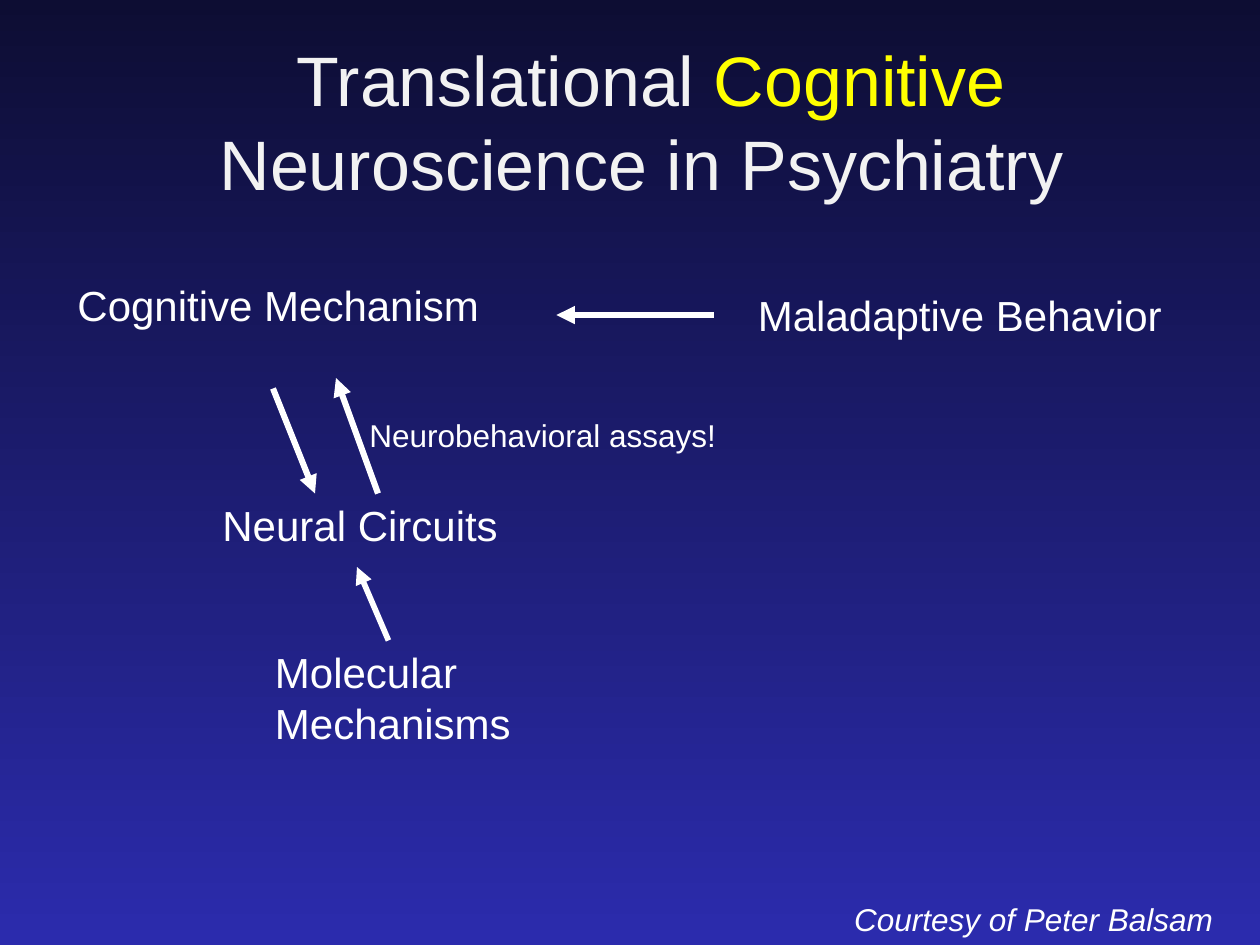
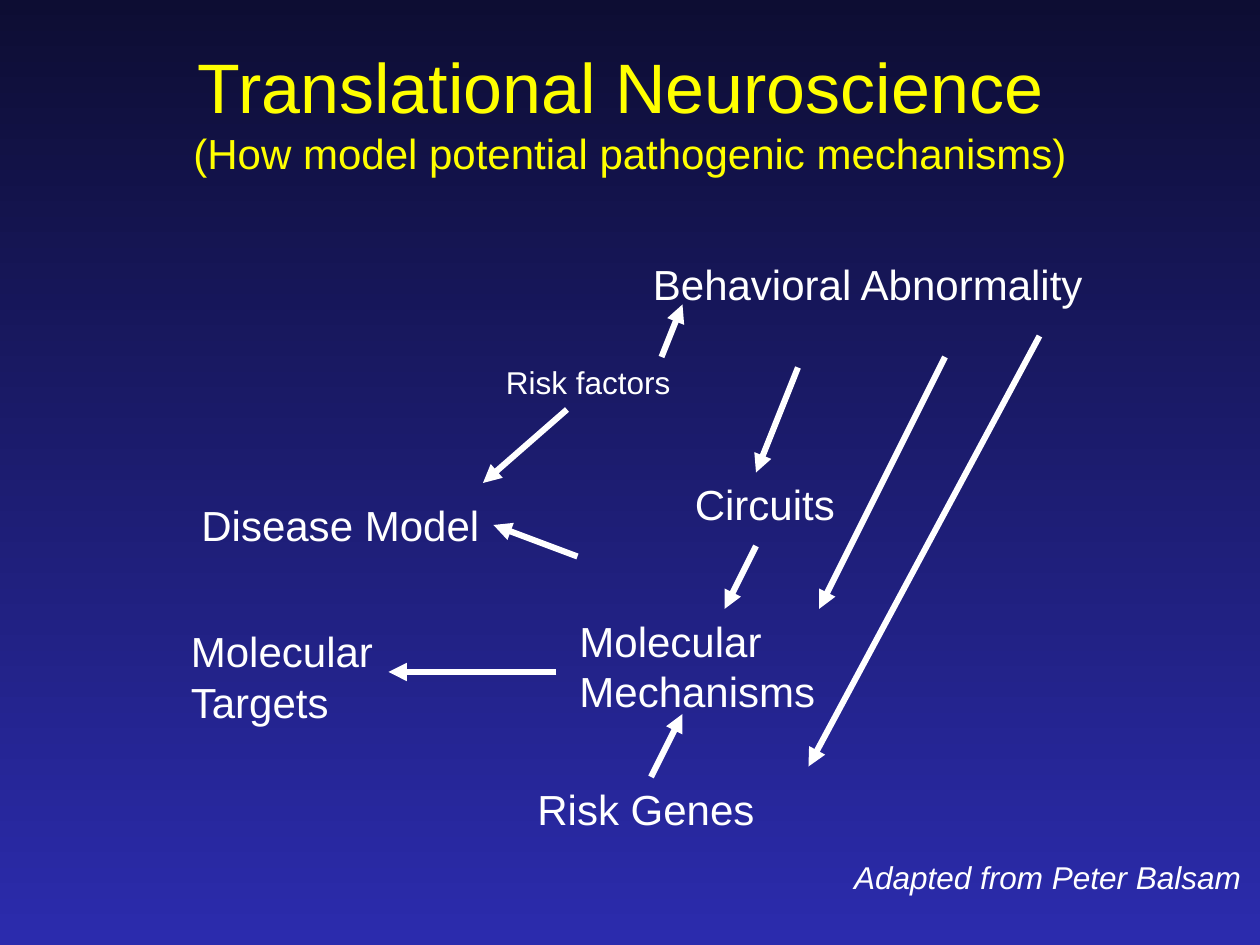
from copy import deepcopy

from lxml.etree import SubElement
from pptx import Presentation
from pptx.dml.color import RGBColor
from pptx.enum.shapes import MSO_CONNECTOR
from pptx.enum.text import MSO_ANCHOR, MSO_AUTO_SIZE, PP_ALIGN
from pptx.oxml.ns import qn
from pptx.util import Pt

FONT = "Arial"
WHITE = "FFFFFF"
PALE = "F2F2F2"
YELLOW = "FFFF00"
BACKGROUND = ["0D0D33", "2B2BAD"]
LABEL_SIZE = 24
NOTE_SIZE = 18


def write(paragraph, text, size=LABEL_SIZE, color=WHITE, italic=False, line_break=False):
    run = paragraph.add_run()
    run.text = text
    run.font.name = FONT
    run.font.size = Pt(size)
    run.font.italic = italic
    run.font.color.rgb = RGBColor.from_string(color)
    if line_break:
        paragraph.add_line_break()
        paragraph._p[-1].append(deepcopy(run._r.rPr))


slides = [
    {
        "title_box": (66, 24, 612, 90),
        "title": [
            ("Translational ", {"size": 40, "color": PALE}),
            ("Cognitive", {"size": 40, "color": YELLOW}),
            (" Neuroscience in Psychiatry ", {"size": 40, "color": PALE}),
        ],
        "labels": [
            ("Cognitive Mechanism", (30, 156, 258, 36), PP_ALIGN.CENTER),
            ("Maladaptive Behavior", (426, 162, 264, 36), PP_ALIGN.LEFT),
            ("Molecular Mechanisms", (150, 366, 156, 65), PP_ALIGN.LEFT),
            ("Neural Circuits", (120, 282, 192, 36), PP_ALIGN.LEFT),
        ],
        "note": ("Neurobehavioral assays!", (204, 234, 214.5, 29)),
        "credit": ("Courtesy of Peter Balsam", 511),
        "arrows": [
            ((216, 282), (192, 216), 3.5),
            ((408, 180), (318, 180), 3.5),
            ((156, 222), (180, 282), 3.5),
            ((222, 366), (204, 324), 3.25),
        ],
    },
    {
        "title_box": (6, 18, 708, 90),
        "title": [
            ("Translational Neuroscience ", {"size": 40, "color": YELLOW, "line_break": True}),
            ("(How model potential pathogenic mechanisms)", {"color": YELLOW}),
        ],
        "labels": [
            ("Behavioral Abnormality", (366, 144, 264, 36), PP_ALIGN.LEFT),
            ("Molecular Targets", (102, 354, 138, 65), PP_ALIGN.LEFT),
            ("Risk Genes", (300, 444, 156, 36), PP_ALIGN.LEFT),
            ("Circuits", (390, 270, 114, 36), PP_ALIGN.LEFT),
            ("Molecular Mechanisms", (324, 348, 156, 65), PP_ALIGN.LEFT),
            ("Disease Model", (108, 282, 175, 36), PP_ALIGN.LEFT),
        ],
        "note": ("Risk factors", (282, 204, 109.5, 29)),
        "credit": ("Adapted from Peter Balsam", 487),
        "arrows": [
            ((456, 210), (432, 270), 3.5),
            ((432, 312), (414, 348), 3.5),
            ((540, 204), (468, 348), 3.5),
            ((594, 192), (462, 438), 3.5),
            ((318, 384), (222, 384), 3.5),
            ((372, 444), (390, 408), 3.5),
            ((378, 204), (390, 174), 3.5),
            ((330, 318), (282, 300), 3.5),
            ((324, 234), (276, 276), 3.5),
        ],
    },
]

presentation = Presentation()
presentation.slide_width = Pt(720)
presentation.slide_height = Pt(540)

background = presentation.slide_master.background.fill
background.gradient()
background.gradient_angle = 270
for stop, color in zip(background.gradient_stops, BACKGROUND):
    stop.color.rgb = RGBColor.from_string(color)

for content in slides:
    slide = presentation.slides.add_slide(presentation.slide_layouts[5])

    title = slide.shapes.title
    title.left, title.top, title.width, title.height = map(Pt, content["title_box"])
    title.text_frame.auto_size = MSO_AUTO_SIZE.NONE
    title.text_frame.vertical_anchor = MSO_ANCHOR.MIDDLE
    title_paragraph = title.text_frame.paragraphs[0]
    title_paragraph.alignment = PP_ALIGN.CENTER
    for text, text_format in content["title"]:
        write(title_paragraph, text, **text_format)

    note, note_box = content["note"]
    credit, credit_top = content["credit"]
    texts = [(text, box, alignment, True, {}) for text, box, alignment in content["labels"]]
    texts.append((note, note_box, PP_ALIGN.LEFT, False, {"size": NOTE_SIZE}))
    texts.append((credit, (481, credit_top, 239, 29), PP_ALIGN.LEFT, True,
                  {"size": NOTE_SIZE, "italic": True}))
    for text, box, alignment, wraps, text_format in texts:
        text_frame = slide.shapes.add_textbox(*map(Pt, box)).text_frame
        text_frame.word_wrap = wraps
        text_frame.auto_size = MSO_AUTO_SIZE.SHAPE_TO_FIT_TEXT
        text_frame.paragraphs[0].alignment = alignment
        write(text_frame.paragraphs[0], text, **text_format)

    for start, end, width in content["arrows"]:
        arrow = slide.shapes.add_connector(MSO_CONNECTOR.STRAIGHT, *map(Pt, start + end))
        arrow.line.color.rgb = RGBColor.from_string(WHITE)
        arrow.line.width = Pt(width)
        SubElement(arrow.line._get_or_add_ln(), qn("a:tailEnd"), type="triangle")
        SubElement(arrow._element.spPr, qn("a:effectLst"))

presentation.save("out.pptx")
